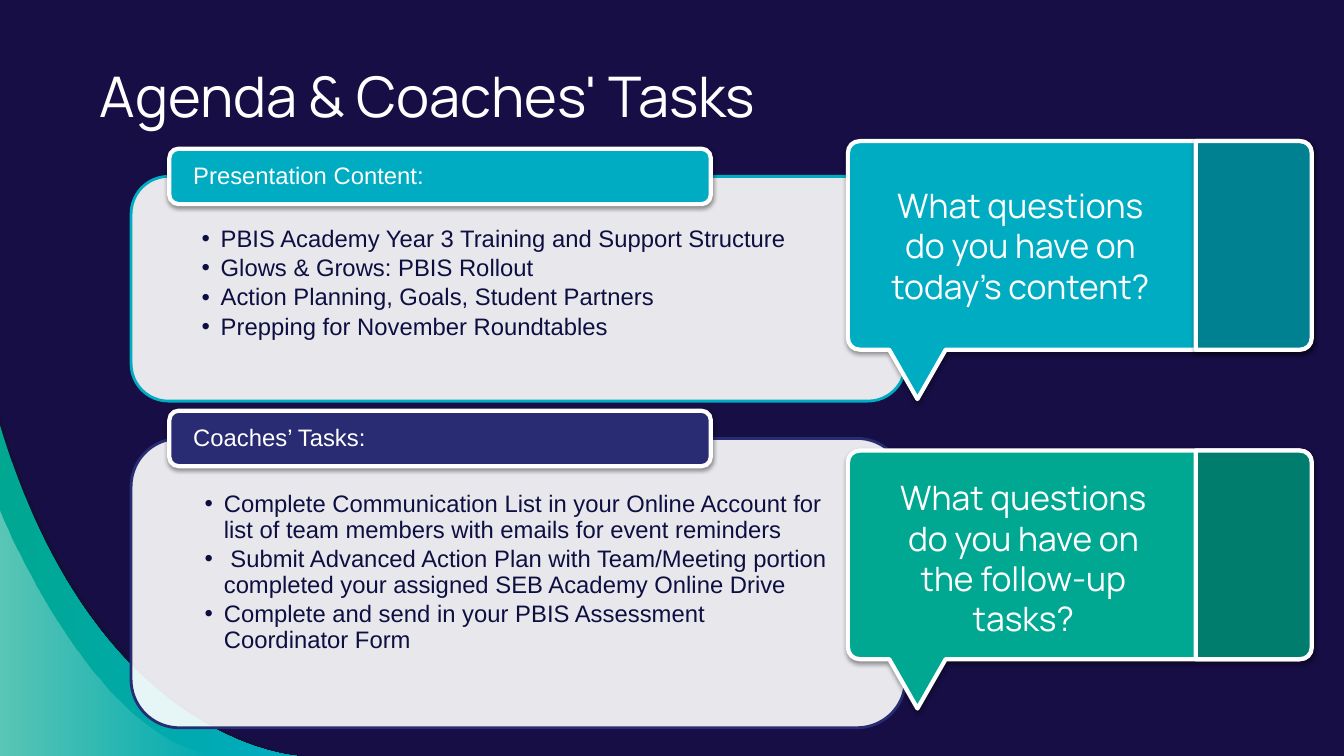
import pptx
import pptx.util
import pptx.dml.color
import pptx.enum.shapes
import pptx.enum.text
import pptx.oxml
import pptx.oxml.ns
from dataclasses import dataclass

# Content
TITLE = "Agenda & Coaches' Tasks"
PANELS = [
    dict(top=1.75, height=2.23, color="00ACC2", label="Presentation Content:", tasks=[
        "PBIS Academy Year 3 Training and Support Structure",
        "Glows & Grows: PBIS Rollout",
        "Action Planning, Goals, Student Partners",
        "Prepping for November Roundtables"]),
    dict(top=4.35, height=2.87, color="292C73", label="Coaches’ Tasks:", tasks=[
        "Complete Communication List in your Online Account for list of team members "
        "with emails for event reminders",
        " Submit Advanced Action Plan with Team/Meeting portion completed your assigned "
        "SEB Academy Online Drive",
        "Complete and send in your PBIS Assessment Coordinator Form"]),
]
BUBBLES = [
    dict(top=1.4, color="00ACC2", dark="008192", dark_shadow=True, inset=(0.19, 0.38),
         text="What questions do you have on today’s content?"),
    dict(top=4.47, color="00A791", dark="007D6D", dark_shadow=False, inset=(0.22, 0.41),
         text="What questions do you have on the follow-up tasks?"),
]


@dataclass(frozen=True)
class Theme:
    night: str = "160E44"
    shade: str = "12102F"
    ink: str = "0D0F41"
    white: str = "FFFFFF"
    teal: str = "00ACC2"
    green: str = "00A791"
    display: str = "Manrope"
    body: str = "Arial"
    title_size: int = 40
    bubble_size: int = 24
    body_size: int = 17


THEME = Theme()

# Layout, in inches
WIDTH, HEIGHT = 13.33, 7.5
PANEL_LEFT, PANEL_WIDTH = 1.3, 7.68
LABEL_LEFT, LABEL_WIDTH, LABEL_HEIGHT = 1.68, 5.37, 0.55
BUBBLE_LEFT, BUBBLE_RIGHT, BUBBLE_HEIGHT = 8.41, 13.01, 2.07
BAND_LEFT = 11.86
CORNER, BEND = 0.12, 0.05
TAIL_X, TAIL_HALF, TAIL_DROP = 9.1, 0.28, 0.49

Inches, Pt = pptx.util.Inches, pptx.util.Pt
ANCHOR, ALIGN = pptx.enum.text.MSO_ANCHOR, pptx.enum.text.PP_ALIGN
qn = pptx.oxml.ns.qn

deck = pptx.Presentation()
deck.slide_width, deck.slide_height = Inches(WIDTH), Inches(HEIGHT)
page = deck.slides.add_slide(deck.slide_layouts[6])


def rgb(color):
    return pptx.dml.color.RGBColor.from_string(color)


def element(tag, attributes="", inner=""):
    return pptx.oxml.parse_xml(
        f'<a:{tag} {pptx.oxml.ns.nsdecls("a")} {attributes}>{inner}</a:{tag}>')


def add_alpha(shape, *percents):
    colors = shape.element.spPr.findall(".//" + qn("a:srgbClr"))
    for color, percent in zip(colors, percents):
        color.append(element("alpha", f'val="{percent * 1000}"'))


def paint(shape, fill, line=None, width=3, alpha=None, shadow=False):
    shape.fill.solid()
    shape.fill.fore_color.rgb = rgb(fill)
    if alpha is not None:
        add_alpha(shape, alpha)
    if line:
        shape.line.color.rgb = rgb(line)
        shape.line.width = Pt(width)
    else:
        shape.line.fill.background()
    shape.shadow.inherit = False
    if shadow:
        shape.element.spPr.find(qn("a:effectLst")).append(element(
            "outerShdw",
            f'blurRad="{Pt(3.1)}" dist="{Pt(1.6)}" dir="5400000" algn="ctr" rotWithShape="0"',
            '<a:srgbClr val="000000"><a:alpha val="38000"/></a:srgbClr>'))


def paint_gradient(shape, first, last):
    paint(shape, first)
    shape.fill.gradient()
    shape.fill.gradient_angle = 0
    for stop, color in zip(shape.fill.gradient_stops, (first, last)):
        stop.color.rgb = rgb(color)


def outline(start, *legs):
    """Closed outline; a leg of two numbers is a line, of six a cubic curve."""
    points = [(Inches(leg[i]), Inches(leg[i + 1]))
              for leg in legs for i in range(0, len(leg), 2)]
    builder = page.shapes.build_freeform(Inches(start[0]), Inches(start[1]))
    builder.add_line_segments(points, close=True)
    shape = builder.convert_to_shape()
    # Join the three nodes of each curved leg into one Bezier segment
    lines = iter(shape.element.spPr.findall(".//" + qn("a:lnTo")))
    for leg in legs:
        nodes = [next(lines) for _ in range(len(leg) // 2)]
        if len(nodes) == 3:
            curve = element("cubicBezTo")
            nodes[0].addprevious(curve)
            for node in nodes:
                curve.append(node[0])
                node.getparent().remove(node)
    return shape


def write(shape, lines, size, font, color, insets=(0.1, 0.05, 0.1, 0.05),
          anchor=ANCHOR.MIDDLE, align=ALIGN.LEFT, spacing=None, after=0, bullets=False):
    frame = shape.text_frame
    frame.word_wrap = True
    frame.vertical_anchor = anchor
    (frame.margin_left, frame.margin_top,
     frame.margin_right, frame.margin_bottom) = map(Inches, insets)
    frame.text = "\n".join(lines)
    for para in frame.paragraphs:
        para.alignment = align
        para.space_after = Pt(after)
        if spacing:
            para.line_spacing = spacing
        if bullets:
            props = para._p.get_or_add_pPr()
            props.set("marL", str(Inches(0.19)))
            props.set("indent", str(-Inches(0.19)))
            props.append(element("buFont", f'typeface="{font}"'))
            props.append(element("buChar", 'char="•"'))
        for span in para.runs:
            span.font.size, span.font.name = Pt(size), font
            span.font.color.rgb = rgb(color)
        para._p.append(element("endParaRPr", f'sz="{size * 100}"',
                               f'<a:latin typeface="{font}"/>'))


def text_box(*place):
    return page.shapes.add_textbox(*map(Inches, place))


def round_box(*place):
    return page.shapes.add_shape(
        pptx.enum.shapes.MSO_SHAPE.ROUNDED_RECTANGLE, *map(Inches, place))


# Background and corner swoosh
page.background.fill.solid()
page.background.fill.fore_color.rgb = rgb(THEME.night)
paint(outline((0, 4.13), (0.98, 7.39, 3.03, HEIGHT, 3.03, HEIGHT), (0, HEIGHT)),
      THEME.shade, alpha=54)
swoosh = outline((2.95, HEIGHT), (2.95, HEIGHT, 0.95, 7.39, 0, 4.22), (0, HEIGHT))
paint_gradient(swoosh, THEME.green, THEME.teal)
sheen = outline((0, 5.06), (0, 5.06, 0.91, 7.35, 2.16, HEIGHT), (0, HEIGHT))
paint_gradient(sheen, THEME.white, THEME.white)
add_alpha(sheen, 36, 0)

# Panels with their labels
for panel in PANELS:
    box = round_box(PANEL_LEFT, panel["top"], PANEL_WIDTH, panel["height"])
    paint(box, THEME.white, panel["color"], width=2, alpha=90)
    write(box, panel["tasks"], THEME.body_size, THEME.body, THEME.ink,
          (0.59, 0.39, 0.59, 0.13), ANCHOR.TOP, spacing=0.9, after=2.6, bullets=True)
    label = round_box(LABEL_LEFT, panel["top"] - LABEL_HEIGHT / 2, LABEL_WIDTH, LABEL_HEIGHT)
    paint(label, panel["color"], THEME.white, shadow=True)
    write(label, [panel["label"]], THEME.body_size, THEME.body, THEME.white,
          (0.21, 0, 0.2, 0), spacing=0.9)

# Title
write(text_box(0.89, 0.48, 10.26, 0.92), [TITLE], THEME.title_size, THEME.display,
      THEME.white, (0.1, 0.1, 0.1, 0.1))

# Speech bubbles
for bubble in BUBBLES:
    left, right, top = BUBBLE_LEFT, BUBBLE_RIGHT, bubble["top"]
    base = top + BUBBLE_HEIGHT
    right_side = [
        (right - BEND, top, right, top + BEND, right, top + CORNER),
        (right, base - CORNER),
        (right, base - BEND, right - BEND, base, right - CORNER, base)]
    start = (right - CORNER, top)
    body = outline(
        start, *right_side,
        (TAIL_X + TAIL_HALF, base), (TAIL_X, base + TAIL_DROP), (TAIL_X - TAIL_HALF, base),
        (left + CORNER, base),
        (left + BEND, base, left, base - BEND, left, base - CORNER),
        (left, top + CORNER),
        (left, top + BEND, left + BEND, top, left + CORNER, top))
    paint(body, bubble["color"], THEME.white, shadow=True)
    band = outline(start, *right_side, (BAND_LEFT, base), (BAND_LEFT, top))
    paint(band, bubble["dark"], THEME.white, shadow=bubble["dark_shadow"])
    shift_x, shift_y = bubble["inset"]
    write(text_box(left + shift_x, top + shift_y, 3.04, 1.31), [bubble["text"]],
          THEME.bubble_size, THEME.display, THEME.white, align=ALIGN.CENTER)

deck.save("out.pptx")
